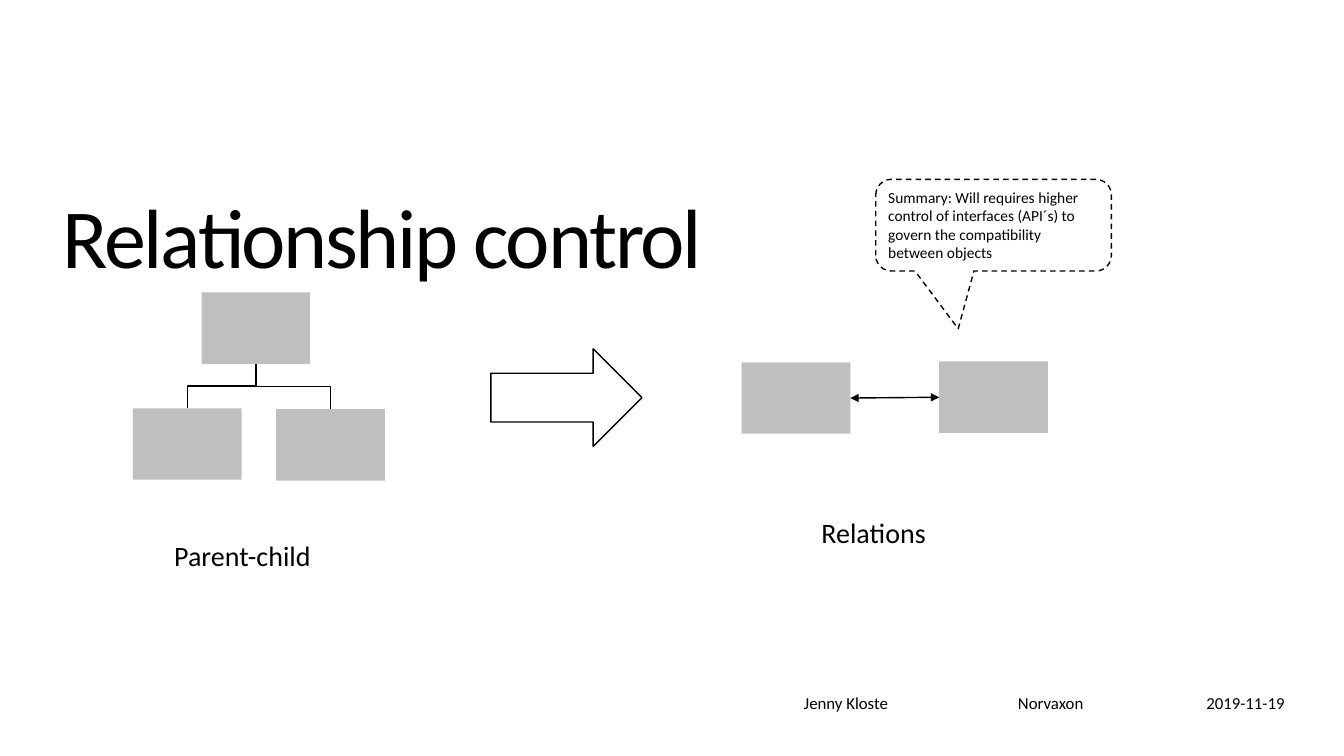
from lxml import etree
from pptx import Presentation
from pptx.dml.color import RGBColor
from pptx.enum.dml import MSO_LINE
from pptx.enum.shapes import MSO_CONNECTOR, MSO_SHAPE
from pptx.enum.text import MSO_ANCHOR, MSO_AUTO_SIZE, PP_ALIGN
from pptx.oxml.ns import qn
from pptx.util import Cm, Pt

BLACK = RGBColor(0x00, 0x00, 0x00)
WHITE = RGBColor(0xFF, 0xFF, 0xFF)
GREY = RGBColor(0xBF, 0xBF, 0xBF)
RECTANGLE = MSO_SHAPE.RECTANGLE
RIGHT_ARROW = MSO_SHAPE.RIGHT_ARROW
CALLOUT = MSO_SHAPE.ROUNDED_RECTANGULAR_CALLOUT
STRAIGHT, ELBOW = MSO_CONNECTOR.STRAIGHT, MSO_CONNECTOR.ELBOW
DASH = MSO_LINE.DASH
LEFT, CENTER, RIGHT = PP_ALIGN.LEFT, PP_ALIGN.CENTER, PP_ALIGN.RIGHT
TOP, MIDDLE, BOTTOM = MSO_ANCHOR.TOP, MSO_ANCHOR.MIDDLE, MSO_ANCHOR.BOTTOM
NO_AUTOFIT = MSO_AUTO_SIZE.NONE
TOP_SIDE, LEFT_SIDE, BOTTOM_SIDE, RIGHT_SIDE = range(4)
TIGHT = (0.2, 0.1, 0.2, 0.1)
ROOMY = (0.25, 0.13, 0.25, 0.13)


class SlideBuilder:
    font = "Calibri"
    line_width = Pt(1)

    def __init__(self, slide):
        self.slide = slide

    def fill_text(self, shape, text, size, align=LEFT, anchor=TOP,
                  insets=TIGHT, spacing=1.0, before=0):
        frame = shape.text_frame
        frame.word_wrap = True
        frame.auto_size = NO_AUTOFIT
        frame.vertical_anchor = anchor
        (frame.margin_left, frame.margin_top,
         frame.margin_right, frame.margin_bottom) = map(Cm, insets)
        paragraph = frame.paragraphs[0]
        paragraph.alignment = align
        paragraph.line_spacing = spacing
        paragraph.space_before = Pt(before)
        run = paragraph.add_run()
        run.text = text
        run.font.name = self.font
        run.font.size = Pt(size)
        run.font.color.rgb = BLACK
        return run

    def title(self, text, left, top, width, height):
        heading = self.slide.shapes.title
        heading.left, heading.top = Cm(left), Cm(top)
        heading.width, heading.height = Cm(width), Cm(height)
        run = self.fill_text(heading, text, 60, anchor=MIDDLE,
                             insets=ROOMY, spacing=0.85)
        run.font._element.set("spc", "-160")

    def text(self, text, left, top, width, height, size, **style):
        box = self.slide.shapes.add_textbox(
            Cm(left), Cm(top), Cm(width), Cm(height))
        self.fill_text(box, text, size, **style)

    def shape(self, preset, left, top, width, height, fill=WHITE, outlined=True):
        shape = self.slide.shapes.add_shape(
            preset, Cm(left), Cm(top), Cm(width), Cm(height))
        shape.shadow.inherit = False
        shape.fill.solid()
        shape.fill.fore_color.rgb = fill
        if outlined:
            shape.line.color.rgb = BLACK
            shape.line.width = self.line_width
        else:
            shape.line.fill.background()
        return shape

    def object_box(self, left, top):
        return self.shape(RECTANGLE, left, top, 2.74, 1.8, GREY, outlined=False)

    def callout(self, text, left, top, width, height, adjustments):
        bubble = self.shape(CALLOUT, left, top, width, height)
        bubble.line.dash_style = DASH
        for index, value in enumerate(adjustments):
            bubble.adjustments[index] = value
        self.fill_text(bubble, text, 11, before=3)

    def connect(self, kind, start, start_side, end, end_side):
        link = self.slide.shapes.add_connector(kind, 0, 0, 0, 0)
        link.begin_connect(start, start_side)
        link.end_connect(end, end_side)
        link.line.color.rgb = BLACK
        link.line.width = self.line_width
        etree.SubElement(link._element.spPr, qn("a:effectLst"))
        return link

    def double_arrow(self, start, start_side, end, end_side):
        link = self.connect(STRAIGHT, start, start_side, end, end_side)
        line = link._element.spPr.find(qn("a:ln"))
        for tip in ("a:headEnd", "a:tailEnd"):
            etree.SubElement(line, qn(tip)).set("type", "triangle")

    def branch(self, parent, child):
        link = self.connect(ELBOW, parent, BOTTOM_SIDE, child, TOP_SIDE)
        to_right = link.end_x > link.begin_x
        center_x = (link.begin_x + link.end_x) // 2
        center_y = (link.begin_y + link.end_y) // 2
        link.width, link.height = link.height, link.width
        link.left = center_x - link.width // 2
        link.top = center_y - link.height // 2
        frame = link._element.spPr.find(qn("a:xfrm"))
        frame.set("rot", "16200000" if to_right else "5400000")
        frame.set("flipH", "1" if to_right else "0")


def main():
    presentation = Presentation()
    presentation.slide_width, presentation.slide_height = Cm(33.87), Cm(19.05)
    slide = presentation.slides.add_slide(presentation.slide_layouts[5])
    builder = SlideBuilder(slide)

    builder.title("Relationship control", 1.32, 1.32, 23.22, 9.6)

    centered = (0.25, 0, 0, 0.13)
    for text, left, width, align, insets in (
        ("Norvaxon", 22.86, 6.99, CENTER, centered),
        ("2019-11-19", 30.02, 2.49, CENTER, centered),
        ("Jenny Kloste", 17.32, 5.31, RIGHT, ROOMY),
    ):
        builder.text(text, left, 17.32, width, 0.79, 12, align=align,
                     anchor=BOTTOM, insets=insets, spacing=0.9, before=10)

    children = [builder.object_box(3.35, 10.29), builder.object_box(6.96, 10.31)]
    parent = builder.object_box(5.08, 7.37)
    for child in children:
        builder.branch(parent, child)

    right_object = builder.object_box(23.67, 9.11)
    left_object = builder.object_box(18.69, 9.13)
    builder.double_arrow(right_object, LEFT_SIDE, left_object, RIGHT_SIDE)

    builder.shape(RIGHT_ARROW, 12.37, 8.79, 3.81, 2.46)
    builder.callout(
        "Summary: Will requires higher control of interfaces (API´s) to "
        "govern the compatibility between objects",
        22.07, 4.52, 5.94, 2.31, (-0.15, 1.13, 0.17))

    for text, left, top in (("Parent-child", 4.19, 13.46),
                            ("Relations", 20.5, 12.88)):
        builder.text(text, left, top, 4.55, 1.19, 20)

    presentation.save("out.pptx")


if __name__ == "__main__":
    main()
